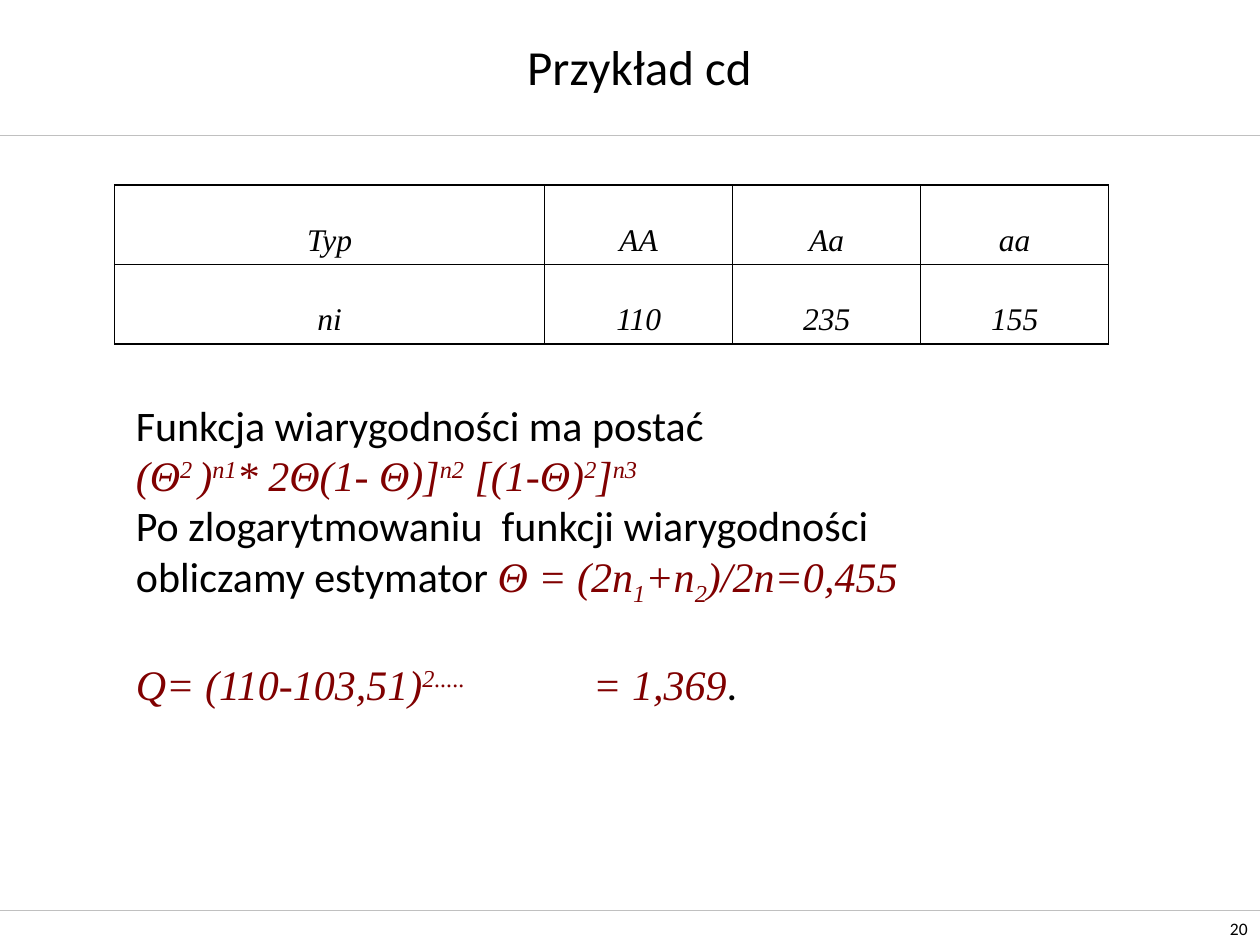
import pptx
import pptx.util
import pptx.dml.color
import pptx.enum.shapes
import pptx.enum.text
import pptx.oxml
import pptx.oxml.ns

Cm, Pt = pptx.util.Cm, pptx.util.Pt
ALIGN = pptx.enum.text.PP_ALIGN
ANCHOR = pptx.enum.text.MSO_ANCHOR
NS = pptx.oxml.ns.nsdecls("a")

# Content
TITLE = "Przykład cd"
PAGE = "20"
GENOTYPES = [
    ["Typ", "AA", "Aa", "aa"],
    ["ni", "110", "235", "155"],
]
# Each run: text, style, baseline shift in percent
DERIVATION = [
    [("Funkcja wiarygodności ma postać", "plain", 0)],
    [("(Θ", "formula", 0), ("2 ", "formula", 30), (")", "formula", 0),
     ("n1", "formula", 30), ("* 2Θ(1- Θ)]", "formula", 0), ("n2", "formula", 30),
     (" [(1-Θ)", "formula", 0), ("2", "formula", 30), ("]", "formula", 0),
     ("n3", "formula", 30)],
    [("Po zlogarytmowaniu  funkcji wiarygodności", "plain", 0)],
    [("obliczamy estymator ", "plain", 0), ("Θ = (2n", "formula", 0),
     ("1", "formula", -25), ("+n", "formula", 0), ("2", "formula", -25),
     (")/2n=0,455", "formula", 0)],
    [("Q= (110-103,51)", "formula", 0), ("2.....", "formula", 30),
     ("\t= 1,369", "formula", 0), (".", "plain", 0)],
]
# Style: font, colour, italic
STYLES = {
    "plain": ("Calibri", "000000", False),
    "formula": ("Times New Roman", "800000", True),
    "cell": ("Times New Roman", "000000", True),
}
RULES_Y = [2.72, 18.34]
COLUMNS = [8.67, 3.79, 3.79, 3.79]
ROW_HEIGHT = 1.6


def rgb(value):
    return pptx.dml.color.RGBColor.from_string(value)


def add_run(paragraph, text, size, style="plain", shift=0):
    run = paragraph.add_run()
    run.text = text
    font = run.font
    font.size = Pt(size)
    font.name, colour, font.italic = STYLES[style]
    font.color.rgb = rgb(colour)
    if shift:
        run._r.get_or_add_rPr().set("baseline", str(shift * 1000))


def add_box(left, top, width, height, anchor):
    box = slide.shapes.add_textbox(Cm(left), Cm(top), Cm(width), Cm(height))
    frame = box.text_frame
    frame.word_wrap = True
    frame.vertical_anchor = anchor
    return frame


def add_borders(cell):
    for side in ("lnL", "lnR", "lnT", "lnB"):
        cell._tc.get_or_add_tcPr().append(pptx.oxml.parse_xml(
            f'<a:{side} {NS} w="12700"><a:solidFill><a:srgbClr val="000000"/>'
            f'</a:solidFill></a:{side}>'))


deck = pptx.Presentation()
deck.slide_width, deck.slide_height = Cm(25.4), Cm(19.05)
slide = deck.slides.add_slide(deck.slide_layouts[6])

# Header and footer rules
for y in RULES_Y:
    rule = slide.shapes.add_connector(
        pptx.enum.shapes.MSO_CONNECTOR.STRAIGHT, 0, Cm(y), deck.slide_width, Cm(y))
    rule.line.color.rgb = rgb("C0C0C0")
    rule.line.width = Pt(0.25)
    rule._element.spPr.append(pptx.oxml.parse_xml(f"<a:effectLst {NS}/>"))

# Page number and title
page = add_box(24.1, 18.34, 1.3, 0.71, ANCHOR.BOTTOM).paragraphs[0]
page.alignment = ALIGN.RIGHT
add_run(page, PAGE, 10)

title = add_box(2.49, 0.53, 20.8, 1.6, ANCHOR.MIDDLE).paragraphs[0]
title.alignment = ALIGN.CENTER
add_run(title, TITLE, 28)

# Genotype counts
counts = slide.shapes.add_table(
    len(GENOTYPES), len(COLUMNS), Cm(2.31), Cm(3.73),
    Cm(sum(COLUMNS)), Cm(ROW_HEIGHT * len(GENOTYPES))).table
counts.first_row = counts.horz_banding = False
for column, width in zip(counts.columns, COLUMNS):
    column.width = Cm(width)
for r, values in enumerate(GENOTYPES):
    counts.rows[r].height = Cm(ROW_HEIGHT)
    for c, value in enumerate(values):
        cell = counts.cell(r, c)
        add_borders(cell)
        cell.fill.background()
        cell.vertical_anchor = ANCHOR.BOTTOM
        entry = cell.text_frame.paragraphs[0]
        entry.alignment = ALIGN.CENTER
        add_run(entry, value, 18, "cell")

# Likelihood and estimator
derivation = add_box(2.49, 7.92, 19.81, 7.44, ANCHOR.TOP)
for i, runs in enumerate(DERIVATION):
    line = derivation.add_paragraph() if i else derivation.paragraphs[0]
    for text, style, shift in runs:
        add_run(line, text, 24, style, shift)

# The test statistic stands apart, its result at a tab stop
line._p.get_or_add_pPr().append(pptx.oxml.parse_xml(
    f'<a:tabLst {NS}><a:tab pos="{Cm(9.22)}" algn="l"/></a:tabLst>'))
line.space_before = Pt(29)

deck.save("out.pptx")
